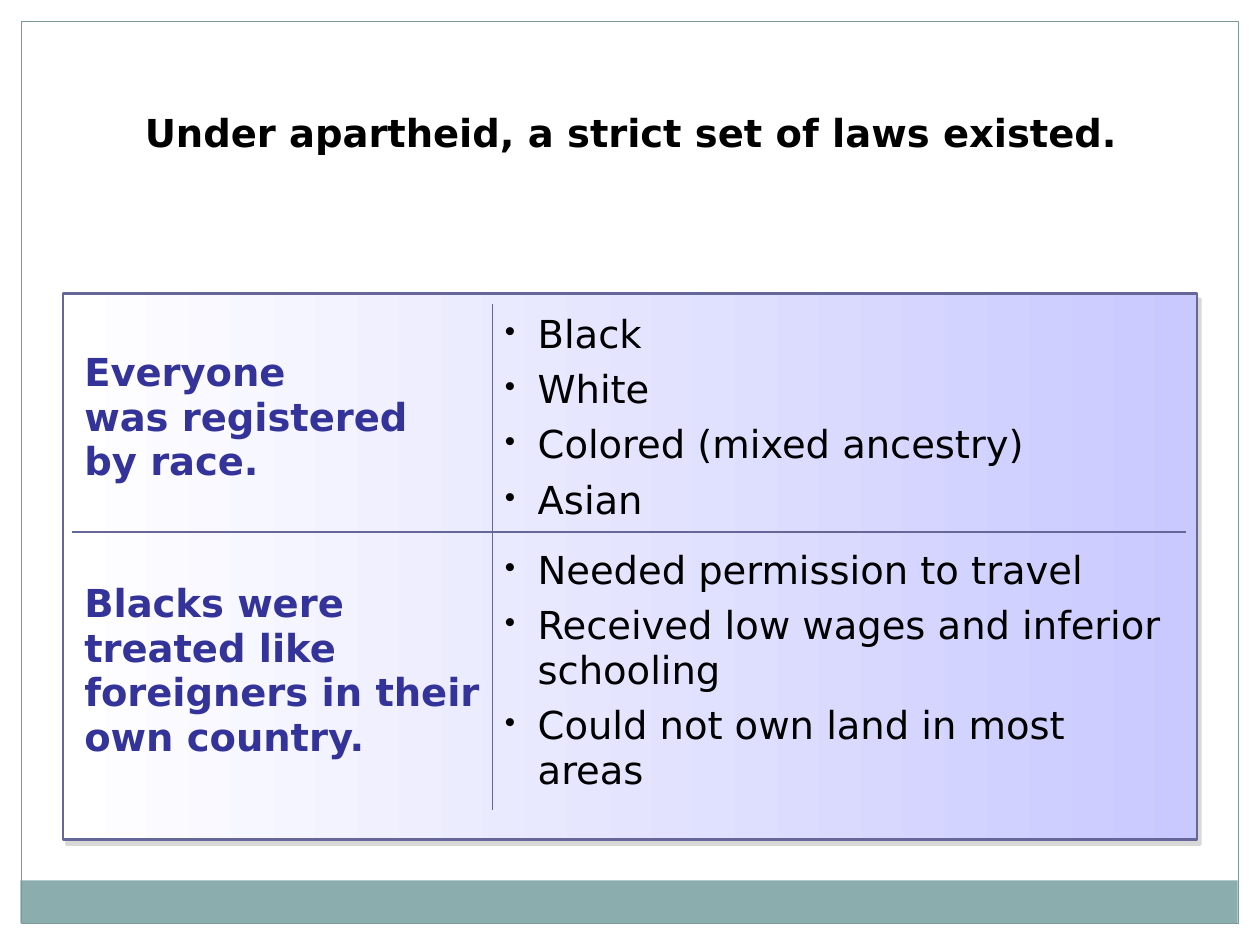
from lxml import etree
from pptx import Presentation
from pptx.dml.color import RGBColor
from pptx.enum.shapes import MSO_SHAPE as Kind
from pptx.enum.text import MSO_ANCHOR as Anchor, PP_ALIGN as Align
from pptx.oxml import parse_xml
from pptx.oxml.ns import nsdecls, qn
from pptx.util import Cm, Pt

EDGE = "666699"
BASE = {"name": "DejaVu Sans", "size": Pt(22)}
HEAD = {**BASE, "bold": True}
BODY = {**BASE, "bold": False}


def tint(code):
    return RGBColor.from_string(code)


def write(para, text, form, color):
    """Fill a paragraph and format each of its runs."""
    para.text = text
    for run in para.runs:
        for key, val in form.items():
            setattr(run.font, key, val)
        run.font.color.rgb = tint(color)


deck = Presentation()
deck.slide_width, deck.slide_height = Cm(25.4), Cm(19.05)
slide = deck.slides.add_slide(deck.slide_layouts[6])

# Footer band, page frame and panel: place, fill, line, line width
boxes = [
    ((0.41, 17.75, 24.54, 0.86), "8CADAE", None, 0),
    ((0.43, 0.43, 24.54, 18.19), None, "7C999A", 0.75),
    ((1.27, 5.92, 22.86, 11), None, EDGE, 1.5),
]
for place, fill, line, width in boxes:
    box = slide.shapes.add_shape(Kind.RECTANGLE, *map(Cm, place))
    box.shadow.inherit = False
    if fill:
        box.fill.solid()
        box.fill.fore_color.rgb = tint(fill)
    else:
        box.fill.background()
    if line:
        box.line.color.rgb = tint(line)
        box.line.width = Pt(width)
    else:
        box.line.fill.background()

panel = box
panel.fill.gradient()
panel.fill.gradient_angle = 0
for stop, place, color in zip(panel.fill.gradient_stops, (0, 1), ("FFFFFF", "C9C9FF")):
    stop.position = place
    stop.color.rgb = tint(color)
glow = panel._element.spPr.find(qn("a:effectLst"))
glow.append(parse_xml(
    f'<a:outerShdw {nsdecls("a")} blurRad="0" dist="{Pt(3.6)}" dir="{56 * 60000}">'
    '<a:srgbClr val="B2B2B2"><a:alpha val="50000"/></a:srgbClr></a:outerShdw>'))

# Laws table: only the inner borders show
laws = [
    ("Everyone \vwas registered \vby race.",
     ["Black", "White", "Colored (mixed ancestry)", "Asian"]),
    ("Blacks were treated like foreigners in their own country.",
     ["Needed permission to travel",
      "Received low wages and inferior schooling",
      "Could not own land in most areas"]),
]
frame = slide.shapes.add_table(2, 2, Cm(1.45), Cm(6.12), Cm(22.45), Cm(10.21))
table = frame.table
table.first_row = table.horz_banding = False
for col, width in zip(table.columns, (8.48, 13.97)):
    col.width = Cm(width)
for row, height in zip(table.rows, (4.6, 5.61)):
    row.height = Cm(height)

for r, (topic, facts) in enumerate(laws):
    for c, lines in enumerate(([topic], facts)):
        cell = table.cell(r, c)
        cell.vertical_anchor = Anchor.MIDDLE
        cell.margin_left = cell.margin_right = Cm(0.25)
        cell.margin_top = cell.margin_bottom = Cm(0.18)
        cell.fill.background()
        prop = cell._tc.get_or_add_tcPr()
        inner = {"L": c == 1, "R": c == 0, "T": r == 1, "B": r == 0}
        for i, (side, shown) in enumerate(inner.items()):
            paint = (f'<a:solidFill><a:srgbClr val="{EDGE}"/></a:solidFill>'
                     if shown else "<a:noFill/>")
            prop.insert(i, parse_xml(
                f'<a:ln{side} {nsdecls("a")} w="{Pt(1)}">{paint}</a:ln{side}>'))

        text = cell.text_frame
        for i, line in enumerate(lines):
            para = text.add_paragraph() if i else text.paragraphs[0]
            if c == 0:
                write(para, line, HEAD, "333399")
                continue
            write(para, line, BODY, "000000")
            para.space_after = Pt(6)
            mark = para._p.get_or_add_pPr()
            mark.set("marL", str(Cm(0.66)))
            mark.set("indent", str(-Cm(0.66)))
            tone = etree.SubElement(mark, qn("a:buClr"))
            etree.SubElement(tone, qn("a:srgbClr"), val="000000")
            etree.SubElement(mark, qn("a:buSzPct"), val="80000")
            etree.SubElement(mark, qn("a:buChar"), char="•")

title = slide.shapes.add_textbox(Cm(2.34), Cm(2.08), Cm(20.75), Cm(1.19))
title.text_frame.word_wrap = True
para = title.text_frame.paragraphs[0]
para.alignment = Align.CENTER
write(para, "Under apartheid, a strict set of laws existed.", HEAD, "000000")

deck.save("out.pptx")
